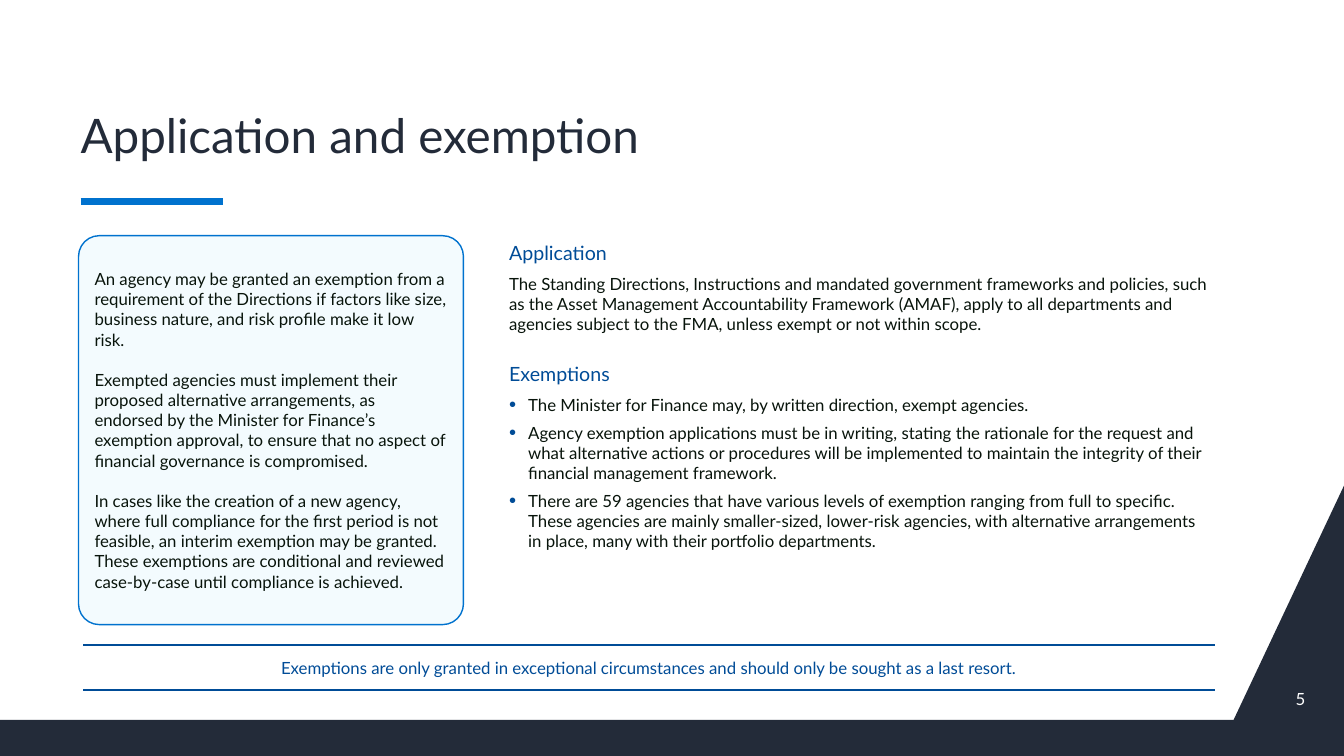
import pptx
import pptx.dml.color
import pptx.enum.shapes
import pptx.enum.text
import pptx.oxml
import pptx.oxml.ns
import pptx.util
from pptx.util import Cm

NAVY, BLUE, DEEP_BLUE = "232B39", "0072CE", "004C97"
INK, PALE, WHITE = "08140B", "F3FBFE", "FFFFFF"
ALIGN = pptx.enum.text.PP_ALIGN
ANCHOR = pptx.enum.text.MSO_ANCHOR

# Text formats: font size and colour, then paragraph values
TITLE = {"size": 34, "color": NAVY, "line_spacing": 0.9}
HEADING = {"size": 14, "color": DEEP_BLUE, "space_after": 4}
BODY = {"size": 12, "color": INK, "space_before": 2.4, "space_after": 3}
CALLOUT = {"size": 12, "color": INK}
BANNER = {"size": 12, "color": DEEP_BLUE, "alignment": ALIGN.CENTER}
NUMBER = {"size": 12, "color": WHITE, "alignment": ALIGN.RIGHT}

CALLOUT_TEXTS = [
    "An agency may be granted an exemption from a requirement of the Directions if factors like "
    "size, business nature, and risk profile make it low risk.",
    "Exempted agencies must implement their proposed alternative arrangements, as endorsed by the "
    "Minister for Finance’s exemption approval, to ensure that no aspect of financial governance "
    "is compromised.",
    "In cases like the creation of a new agency, where full compliance for the first period is not "
    "feasible, an interim exemption may be granted. These exemptions are conditional and reviewed "
    "case-by-case until compliance is achieved.",
]
APPLICATION_TEXT = (
    "The Standing Directions, Instructions and mandated government frameworks and policies, such as "
    "the Asset Management Accountability Framework (AMAF), apply to all departments and agencies "
    "subject to the FMA, unless exempt or not within scope."
)
EXEMPTION_TEXTS = [
    "The Minister for Finance may, by written direction, exempt agencies.",
    "Agency exemption applications must be in writing, stating the rationale for the request and "
    "what alternative actions or procedures will be implemented to maintain the integrity of their "
    "financial management framework.",
    "There are 59 agencies that have various levels of exemption ranging from full to specific. "
    "These agencies are mainly smaller-sized, lower-risk agencies, with alternative arrangements "
    "in place, many with their portfolio departments.",
]


def rgb(value):
    return pptx.dml.color.RGBColor.from_string(value)


def add_xml(parent, xml):
    namespace = pptx.oxml.ns.nsdecls("a")
    parent.append(pptx.oxml.parse_xml(xml.replace(" ", f" {namespace} ", 1)))


def set_bullet(paragraph, bulleted):
    properties = paragraph._p.get_or_add_pPr()
    indent = Cm(0.48) if bulleted else 0
    properties.set("marL", str(indent))
    properties.set("indent", str(-indent))
    if bulleted:
        add_xml(properties, f'<a:buClr ><a:srgbClr val="{DEEP_BLUE}"/></a:buClr>')
        add_xml(properties, '<a:buSzPct val="120000"/>')
        add_xml(properties, '<a:buChar char="•"/>')
    else:
        add_xml(properties, "<a:buNone />")


def write(frame, entries):
    """Fill a text frame with (text, format values) entries."""
    for index, (text, values) in enumerate(entries):
        paragraph = frame.paragraphs[0] if index == 0 else frame.add_paragraph()
        set_bullet(paragraph, values.get("bullet", False))
        defaults = {"alignment": ALIGN.LEFT, "space_before": 0, "space_after": 0}
        for name, value in {**defaults, **values}.items():
            if name.startswith("space_"):
                value = pptx.util.Pt(value)
            if name not in ("size", "color", "bullet"):
                setattr(paragraph, name, value)
        run = paragraph.add_run()
        run.text = text
        run.font.name = "Lato"
        run.font.size = pptx.util.Pt(values["size"])
        run.font.color.rgb = rgb(values["color"])


def set_frame(frame, **values):
    defaults = {"word_wrap": True, "auto_size": pptx.enum.text.MSO_AUTO_SIZE.NONE}
    for name, value in {**defaults, **values}.items():
        setattr(frame, name, value)


def place(shape, box):
    for name, value in zip(("left", "top", "width", "height"), box):
        setattr(shape, name, Cm(value))


def fill_placeholder(shape, box, anchor, entries):
    place(shape, box)
    set_frame(shape.text_frame, vertical_anchor=anchor, margin_left=Cm(0.1),
              margin_right=Cm(0.1), margin_top=Cm(0.13), margin_bottom=Cm(0.13))
    write(shape.text_frame, entries)


def add_footer_band(slide, box):
    left, top, width, height = box
    right, bottom = left + width, top + height
    band_top, corner = bottom - 0.91, right - 2.78
    builder = slide.shapes.build_freeform(Cm(corner), Cm(band_top), scale=1.0)
    outline = [(left, band_top), (left, bottom), (right, bottom), (right, top)]
    builder.add_line_segments([(Cm(x), Cm(y)) for x, y in outline])
    shape = builder.convert_to_shape()
    shape.shadow.inherit = False
    shape.fill.solid()
    shape.fill.fore_color.rgb = rgb(NAVY)
    shape.line.fill.background()

    # Slide number in the dark corner
    number = slide.shapes.add_textbox(Cm(right - 1.94), Cm(bottom - 1.96), Cm(1.22), Cm(1.02))
    set_frame(number.text_frame, vertical_anchor=ANCHOR.MIDDLE)
    write(number.text_frame, [("5", NUMBER)])


def add_title(slide, box):
    left, top, width, height = box
    fill_placeholder(slide.shapes.title, box, ANCHOR.BOTTOM,
                     [("Application and exemption", TITLE)])

    # Accent rule under the title
    start, rule_top = left + 0.1, top + height + 0.81
    rule = slide.shapes.add_connector(pptx.enum.shapes.MSO_CONNECTOR.STRAIGHT,
                                      Cm(start), Cm(rule_top), Cm(start + 3.58), Cm(rule_top))
    rule.line.color.rgb = rgb(BLUE)
    rule.line.width = pptx.util.Pt(4.5)
    add_xml(rule._element.spPr, "<a:effectLst />")


def add_callout(slide, box):
    shape = slide.shapes.add_shape(pptx.enum.shapes.MSO_SHAPE.ROUNDED_RECTANGLE,
                                   *[Cm(value) for value in box])
    shape.adjustments[0] = 0.054
    shape.shadow.inherit = False
    shape.fill.solid()
    shape.fill.fore_color.rgb = rgb(PALE)
    shape.line.color.rgb = rgb(BLUE)
    shape.line.width = pptx.util.Pt(1)
    set_frame(shape.text_frame, vertical_anchor=ANCHOR.MIDDLE)
    write(shape.text_frame, [(text, {**CALLOUT, "space_before": 14.4 if index else 0})
                             for index, text in enumerate(CALLOUT_TEXTS)])


def add_body(slide, box):
    entries = [("Application", HEADING), (APPLICATION_TEXT, BODY),
               ("Exemptions", {**HEADING, "space_before": 17.2})]
    entries += [(text, {**BODY, "bullet": True}) for text in EXEMPTION_TEXTS]
    fill_placeholder(slide.placeholders[1], box, ANCHOR.TOP, entries)


def add_banner(slide, box):
    table = slide.shapes.add_table(1, 1, *[Cm(value) for value in box]).table
    table.first_row = table.horz_banding = False
    cell = table.cell(0, 0)
    properties = cell._tc.get_or_add_tcPr()
    sides = {"L": (WHITE, 1), "R": (WHITE, 1), "T": (DEEP_BLUE, 1.5), "B": (DEEP_BLUE, 1.5)}
    for side, (color, width) in sides.items():
        add_xml(properties, f'<a:ln{side} w="{pptx.util.Pt(width)}"><a:solidFill>'
                            f'<a:srgbClr val="{color}"/></a:solidFill></a:ln{side}>')
    cell.fill.solid()
    cell.fill.fore_color.rgb = rgb(WHITE)
    cell.vertical_anchor = ANCHOR.MIDDLE
    write(cell.text_frame, [("Exemptions are only granted in exceptional circumstances and "
                             "should only be sought as a last resort.", BANNER)])


def main():
    presentation = pptx.Presentation()
    presentation.slide_width, presentation.slide_height = Cm(33.87), Cm(19.05)
    slide = presentation.slides.add_slide(presentation.slide_layouts[1])
    add_footer_band(slide, (0, 12.24, 33.87, 6.81))
    add_title(slide, (1.93, 2.16, 19.13, 2.11))
    add_body(slide, (12.73, 5.94, 17.93, 10.2))
    add_callout(slide, (1.98, 5.94, 9.7, 9.8))
    add_banner(slide, (2.08, 16.26, 28.55, 1.12))
    presentation.save("out.pptx")


if __name__ == "__main__":
    main()
